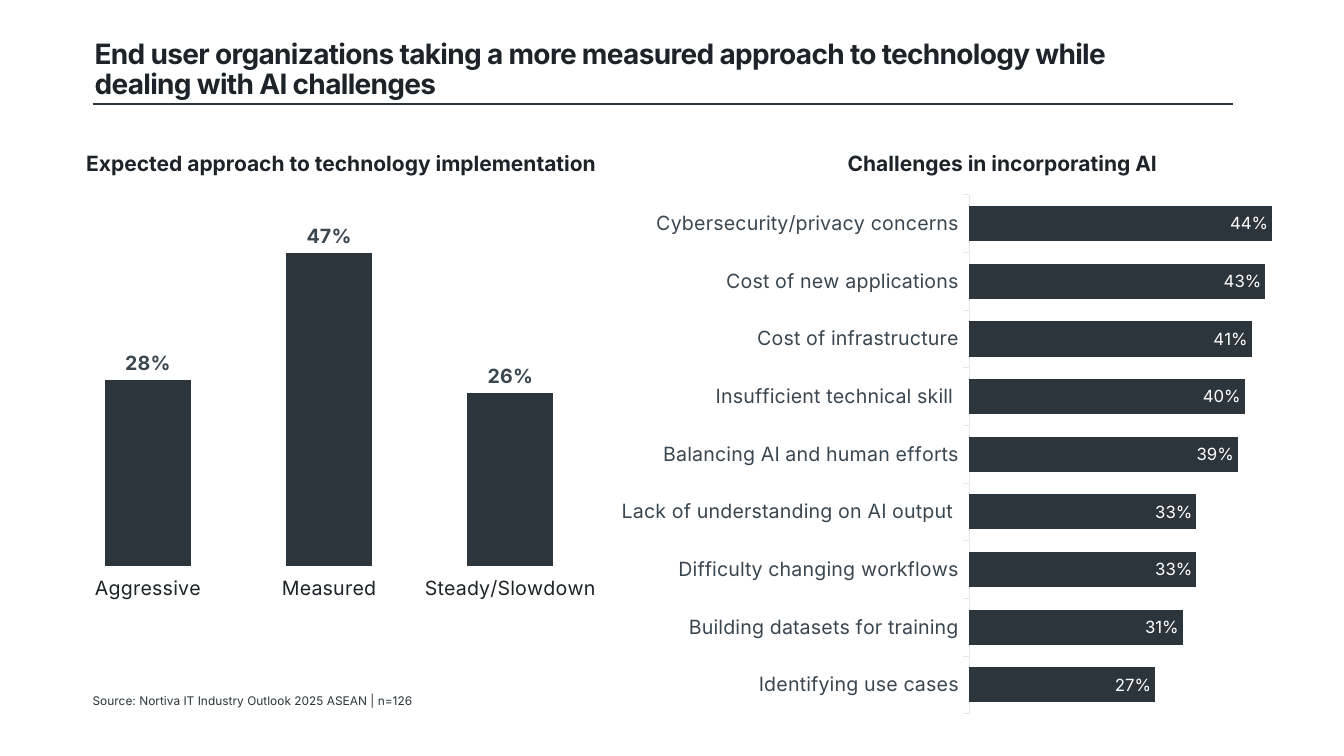
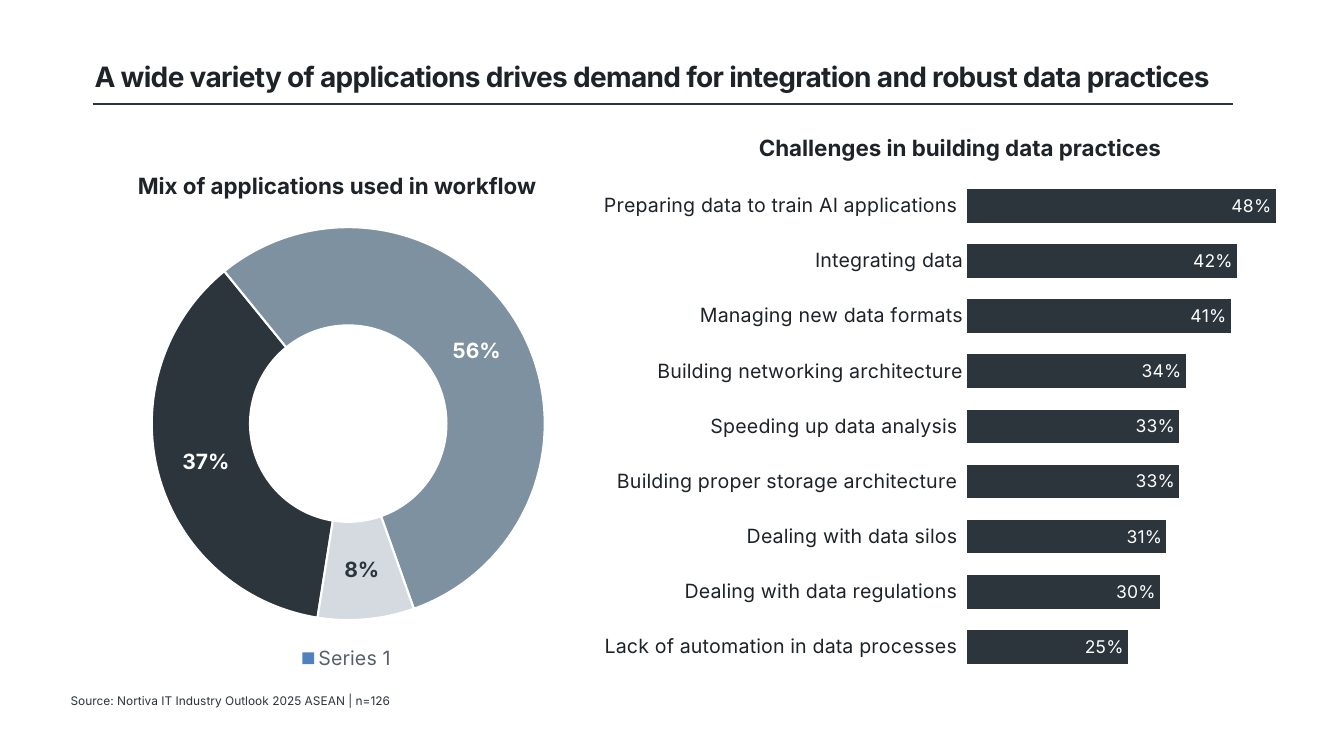
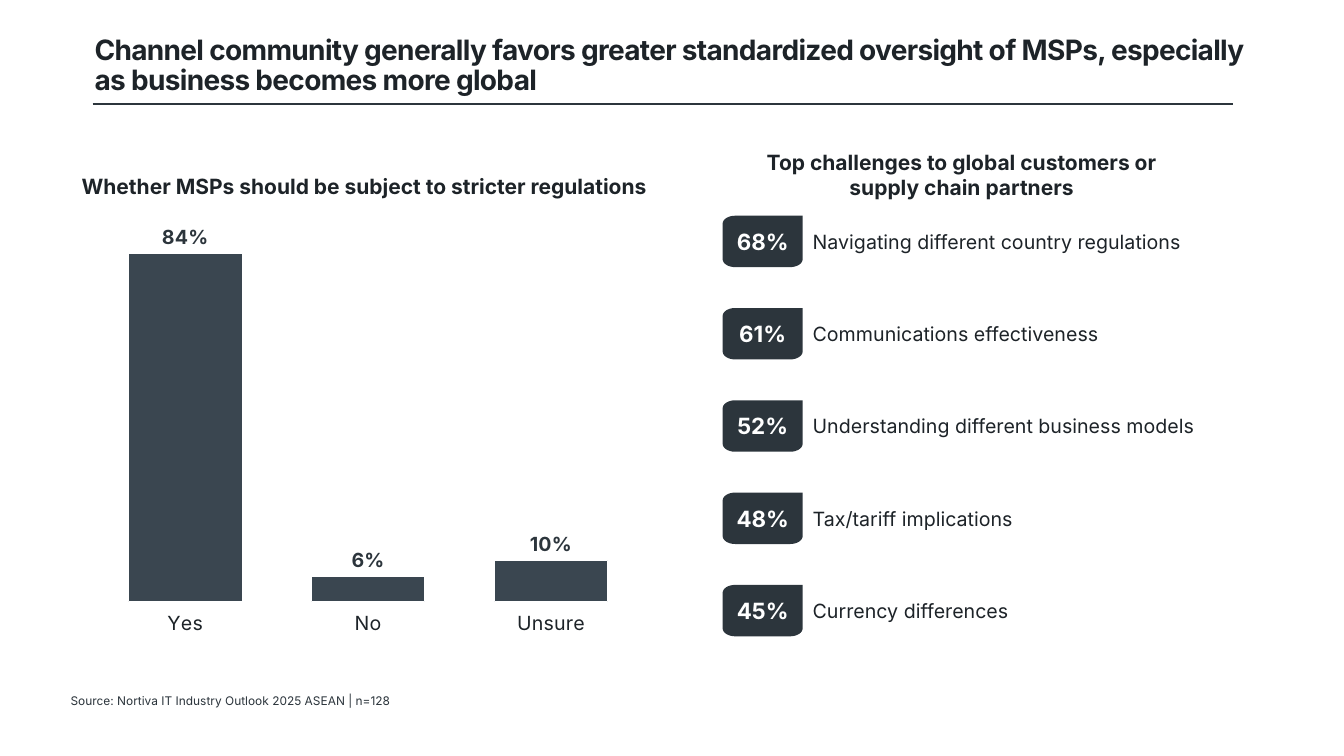
from dataclasses import dataclass
from math import cos, pi, sin
from typing import NamedTuple

from lxml.etree import SubElement
from pptx import Presentation
from pptx.chart.data import CategoryChartData
from pptx.dml.color import RGBColor
from pptx.enum.chart import XL_CHART_TYPE as ChartType
from pptx.enum.chart import XL_LABEL_POSITION as LabelPosition
from pptx.enum.chart import XL_LEGEND_POSITION as LegendPosition
from pptx.enum.chart import XL_TICK_MARK as TickMark
from pptx.enum.shapes import MSO_CONNECTOR as Connector
from pptx.enum.text import MSO_ANCHOR as Anchor
from pptx.enum.text import PP_ALIGN as Align
from pptx.oxml import parse_xml
from pptx.oxml.ns import nsdecls, qn
from pptx.util import Pt


@dataclass(frozen=True)
class Theme:
    font: str = "Inter"
    ink: str = "1D2328"
    dark: str = "2C353C"
    slate: str = "3A4650"
    gray: str = "586169"
    steel: str = "7E91A1"
    mist: str = "D4DAE0"
    axis: str = "E5E7E9"
    white: str = "FFFFFF"
    title: float = 20
    heading: float = 15
    large_heading: float = 16
    tag: float = 16
    body: float = 14
    bar_label: float = 12
    source: float = 8.5


THEME = Theme()


class Box(NamedTuple):
    """Left, top, width and height in points."""
    left: float
    top: float
    width: float
    height: float

    def lengths(self):
        return [Pt(value) for value in self]


def apply_format(target, **values):
    for name, value in values.items():
        setattr(target, name, value)


def set_font(font, size, color, bold=False):
    apply_format(font, name=THEME.font, size=Pt(size), bold=bold)
    font.color.rgb = RGBColor.from_string(color)


def set_fill(fill, color):
    fill.solid()
    fill.fore_color.rgb = RGBColor.from_string(color)


def set_line(line, color, width):
    line.color.rgb = RGBColor.from_string(color)
    line.width = Pt(width)


def write(frame, text, size, color, bold=False, align=Align.LEFT,
          anchor=Anchor.TOP, inset=True):
    """Fill a text frame with one paragraph and return its parts."""
    apply_format(frame, word_wrap=True, vertical_anchor=anchor)
    if not inset:
        apply_format(frame, margin_left=0, margin_top=0, margin_right=0, margin_bottom=0)
    para = frame.paragraphs[0]
    para.alignment = align
    span = para.add_run()
    span.text = text
    set_font(span.font, size, color, bold)
    return para, span


def add_text(page, box, text, size, color, **options):
    shape = page.shapes.add_textbox(*box.lengths())
    return write(shape.text_frame, text, size, color, **options)


def add_title(page, box, text):
    para, span = add_text(page, box, text, THEME.title, THEME.ink, bold=True,
                          anchor=Anchor.MIDDLE)
    para.line_spacing = 0.9
    span.font._element.set("spc", "-50")
    rule = page.shapes.add_connector(Connector.STRAIGHT, Pt(66.2), Pt(74.2), Pt(880.6), Pt(74.2))
    set_line(rule.line, THEME.dark, 1)
    SubElement(rule._element.spPr, qn("a:effectLst"))


def add_heading(page, box, text, size=THEME.heading):
    add_text(page, box, text, size, THEME.ink, bold=True, align=Align.CENTER)


def add_source(page, left, count):
    add_text(page, Box(left, 493.2, 504, 14.4),
             f"Source: Nortiva IT Industry Outlook 2025 ASEAN | n={count}",
             THEME.source, THEME.dark, anchor=Anchor.MIDDLE, inset=False)


def add_page(deck, title, title_box, source_left, count):
    page = deck.slides.add_slide(deck.slide_layouts[6])
    add_title(page, title_box, title)
    add_source(page, source_left, count)
    return page


def place_plot(chart, fractions):
    """Fix the inner plot area as fractions of the chart: x, y, width, height."""
    area = chart.element.find(".//" + qn("c:plotArea"))
    for layout in area.findall(qn("c:layout")):
        area.remove(layout)
    sizes = "".join(f'<c:{tag} val="{value}"/>' for tag, value in zip("xywh", fractions))
    area.insert(0, parse_xml(
        f'<c:layout {nsdecls("c")}><c:manualLayout><c:layoutTarget val="inner"/>'
        f'<c:xMode val="edge"/><c:yMode val="edge"/>{sizes}</c:manualLayout></c:layout>'))


def add_percent_chart(page, box, kind, rows, plot_area):
    data = CategoryChartData(number_format="0%")
    data.categories = [name for name, _ in rows]
    data.add_series("Series 1", [percent / 100 for _, percent in rows])
    chart = page.shapes.add_chart(kind, *box.lengths(), data).chart
    apply_format(chart, has_title=False, has_legend=False)
    set_font(chart.font, THEME.body, THEME.gray)
    place_plot(chart, plot_area)
    plot = chart.plots[0]
    apply_format(plot, vary_by_categories=False, has_data_labels=True)
    apply_format(plot.data_labels, show_value=True, show_percentage=False,
                 number_format="0%", number_format_is_linked=False)
    return chart


def style_bars(chart, top, gap, fill, tick_color, ticks):
    """Set axes and bars; top is the end of the hidden value axis."""
    apply_format(chart.value_axis, visible=False, has_major_gridlines=False,
                 minimum_scale=0, maximum_scale=top)
    axis = chart.category_axis
    apply_format(axis, has_major_gridlines=False, major_tick_mark=ticks,
                 minor_tick_mark=TickMark.NONE)
    axis.format.line.fill.background()
    set_font(axis.tick_labels.font, THEME.body, tick_color)
    chart.plots[0].gap_width = gap
    series = chart.plots[0].series[0]
    series.invert_if_negative = False
    set_fill(series.format.fill, fill)


def add_columns(page, box, rows, plot_area, top, gap, fill, label_color):
    chart = add_percent_chart(page, box, ChartType.COLUMN_CLUSTERED, rows, plot_area)
    style_bars(chart, top, gap, fill, THEME.ink, TickMark.OUTSIDE)
    set_line(chart.plots[0].series[0].format.line, THEME.white, 0.75)
    labels = chart.plots[0].data_labels
    labels.position = LabelPosition.OUTSIDE_END
    set_font(labels.font, THEME.body, label_color, bold=True)


def add_ranking(page, box, rows, plot_area, top, tick_color, axis_color=None,
                label_size=THEME.bar_label):
    """Horizontal bars; rows run from the top bar down."""
    chart = add_percent_chart(page, box, ChartType.BAR_CLUSTERED, rows[::-1], plot_area)
    ticks = TickMark.OUTSIDE if axis_color else TickMark.NONE
    style_bars(chart, top, 64, THEME.dark, tick_color, ticks)
    if axis_color:
        set_line(chart.category_axis.format.line, axis_color, 0.75)
    chart.plots[0].overlap = -7
    labels = chart.plots[0].data_labels
    labels.position = LabelPosition.INSIDE_END
    set_font(labels.font, label_size, THEME.white)


def add_ring(page, box, rows, plot_area, colors):
    """Doughnut; colors hold a slice colour and a label colour per row."""
    chart = add_percent_chart(page, box, ChartType.DOUGHNUT, rows, plot_area)
    for tag, value in {"firstSliceAng": 189, "holeSize": 54}.items():
        chart.element.find(".//" + qn(f"c:{tag}")).set("val", str(value))
    series = chart.plots[0].series[0]
    for index, (fill, label_color) in enumerate(colors):
        point = series.points[index]
        set_fill(point.format.fill, fill)
        set_line(point.format.line, THEME.white, 1.5)
        set_font(point.data_label.font, THEME.heading, label_color, bold=True)
    chart.has_legend = True
    apply_format(chart.legend, position=LegendPosition.BOTTOM, include_in_layout=False)
    set_font(chart.legend.font, THEME.body, THEME.gray)


def add_tag(page, box, text):
    """Plate with a square top right corner and three rounded ones."""
    radius_x, radius_y, steps = 8.9, 5.8, 8
    left, top, width, height = box
    right, bottom = left + width, top + height
    corners = [(right - radius_x, bottom - radius_y, 0),
               (left + radius_x, bottom - radius_y, 1),
               (left + radius_x, top + radius_y, 2)]
    outline = []
    for center_x, center_y, quarter in corners:
        for step in range(steps + 1):
            angle = (quarter + step / steps) * pi / 2
            outline.append((Pt(center_x + radius_x * cos(angle)),
                            Pt(center_y + radius_y * sin(angle))))
    builder = page.shapes.build_freeform(Pt(right), Pt(top))
    builder.add_line_segments(outline, close=True)
    plate = builder.convert_to_shape()
    plate.shadow.inherit = False
    set_fill(plate.fill, THEME.dark)
    plate.line.fill.background()
    write(plate.text_frame, text, THEME.tag, THEME.white, bold=True,
          align=Align.CENTER, anchor=Anchor.MIDDLE, inset=False)


def add_tag_list(page, box, rows):
    tag_width, tag_height = 57.2, 36.7
    pitch = (box.height - tag_height) / (len(rows) - 1)
    for index, (name, percent) in enumerate(rows):
        top = box.top + index * pitch
        add_tag(page, Box(box.left, top, tag_width, tag_height), f"{percent}%")
        add_text(page, Box(box.left + tag_width, top, box.width - tag_width, tag_height),
                 name, THEME.body, THEME.ink, anchor=Anchor.MIDDLE)


def build_approach_page(deck):
    page = add_page(deck, "End user organizations taking a more measured approach to "
                    "technology while dealing with AI challenges",
                    Box(60.5, 25.2, 805, 50.4), 66.2, 126)
    add_columns(page, Box(41, 145.4, 388.8, 324.7),
                [("Aggressive", 28), ("Measured", 47), ("Steady/Slowdown", 26)],
                (0, 0.005, 0.999, 0.794), 0.54, 108, THEME.dark, THEME.slate)
    add_heading(page, Box(45.4, 103.7, 396.7, 25.2),
                "Expected approach to technology implementation")
    add_ranking(page, Box(396, 129.6, 553.7, 384.5), [
        ("Cybersecurity/privacy concerns", 44),
        ("Cost of new applications", 43),
        ("Cost of infrastructure", 41),
        ("Insufficient technical skill ", 40),
        ("Balancing AI and human efforts", 39),
        ("Lack of understanding on AI output ", 33),
        ("Difficulty changing workflows", 33),
        ("Building datasets for training", 31),
        ("Identifying use cases", 27),
    ], (0.535, 0.025, 0.409, 0.964), 0.46, THEME.slate, THEME.axis)
    add_heading(page, Box(517.7, 103.7, 396.7, 25.2), "Challenges in incorporating AI")


def build_data_page(deck):
    page = add_page(deck, "A wide variety of applications drives demand for integration "
                    "and robust data practices", Box(60.5, 31, 856.8, 50.4), 50.4, 126)
    add_ring(page, Box(15.8, 153.4, 463.7, 328.3),
             [("Wide variety", 37), ("Moderate variety", 56), ("Basic set", 8)],
             (0.19, 0.027, 0.625, 0.855),
             [(THEME.dark, THEME.white), (THEME.steel, THEME.white), (THEME.mist, THEME.dark)])
    add_heading(page, Box(89.3, 119.5, 303.1, 26.6),
                "Mix of applications used in workflow", THEME.large_heading)
    add_ranking(page, Box(393.1, 118.1, 553.7, 367.9), [
        ("Preparing data to train AI applications ", 48),
        ("Integrating data", 42),
        ("Managing new data formats", 41),
        ("Building networking architecture", 34),
        ("Speeding up data analysis ", 33),
        ("Building proper storage architecture ", 33),
        ("Dealing with data silos ", 31),
        ("Dealing with data regulations ", 30),
        ("Lack of automation in data processes ", 25),
    ], (0.538, 0.025, 0.406, 0.964), 0.49, THEME.ink, label_size=12.5)
    add_heading(page, Box(517.7, 92.2, 336.2, 26.6),
                "Challenges in building data practices", THEME.large_heading)


def build_oversight_page(deck):
    page = add_page(deck, "Channel community generally favors greater standardized oversight "
                    "of MSPs, especially as business becomes more global",
                    Box(60.5, 22.3, 856.8, 50.4), 50.4, 128)
    add_columns(page, Box(67, 161.3, 392.4, 324.7),
                [("Yes", 84), ("No", 6), ("Unsure", 10)],
                (0, 0.035, 0.999, 0.791), 0.86, 61, THEME.slate, THEME.dark)
    add_heading(page, Box(50.4, 120.2, 419.8, 25.2),
                "Whether MSPs should be subject to stricter regulations")
    add_heading(page, Box(536.4, 103, 301, 43.9),
                "Top challenges to global customers or supply chain partners")
    add_tag_list(page, Box(516.2, 154.1, 364, 300.4), [
        ("Navigating different country regulations", 68),
        ("Communications effectiveness", 61),
        ("Understanding different business models", 52),
        ("Tax/tariff implications", 48),
        ("Currency differences", 45),
    ])


def main():
    deck = Presentation()
    apply_format(deck, slide_width=Pt(960), slide_height=Pt(540))
    for build in (build_approach_page, build_data_page, build_oversight_page):
        build(deck)
    deck.save("out.pptx")


if __name__ == "__main__":
    main()
